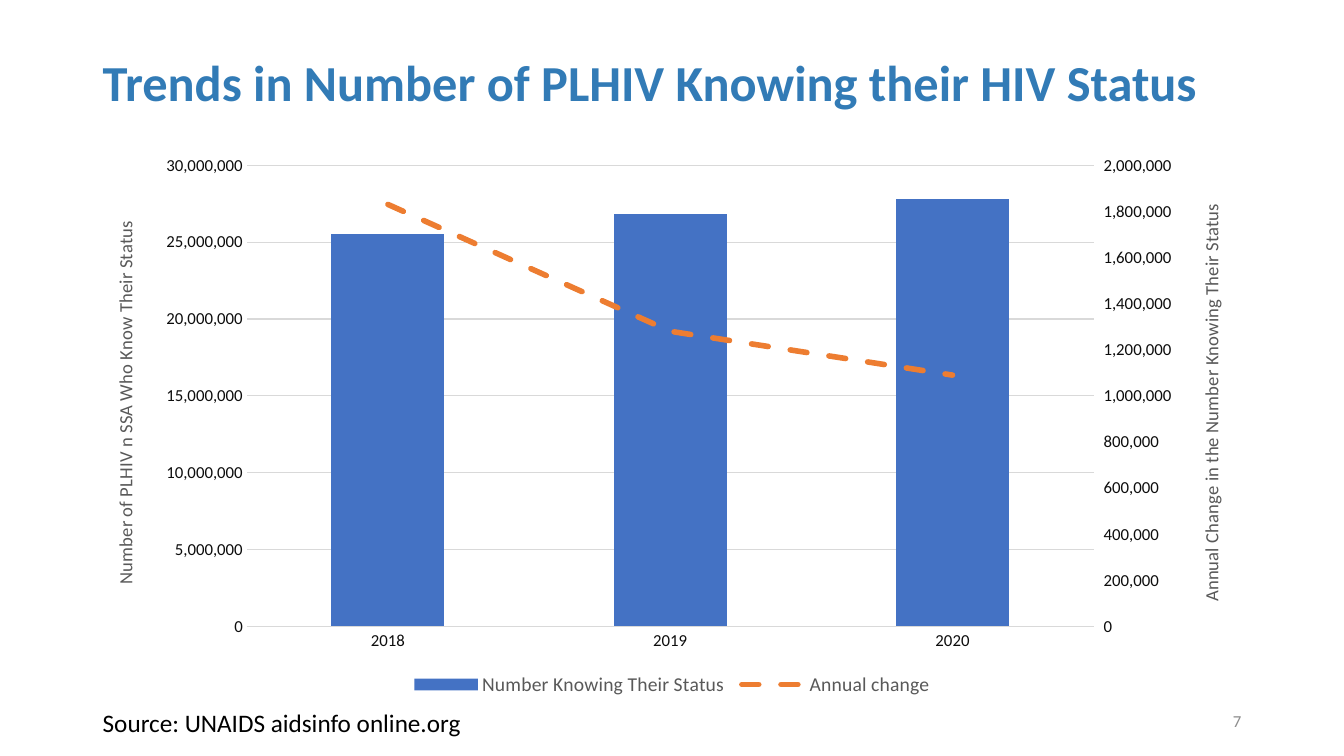
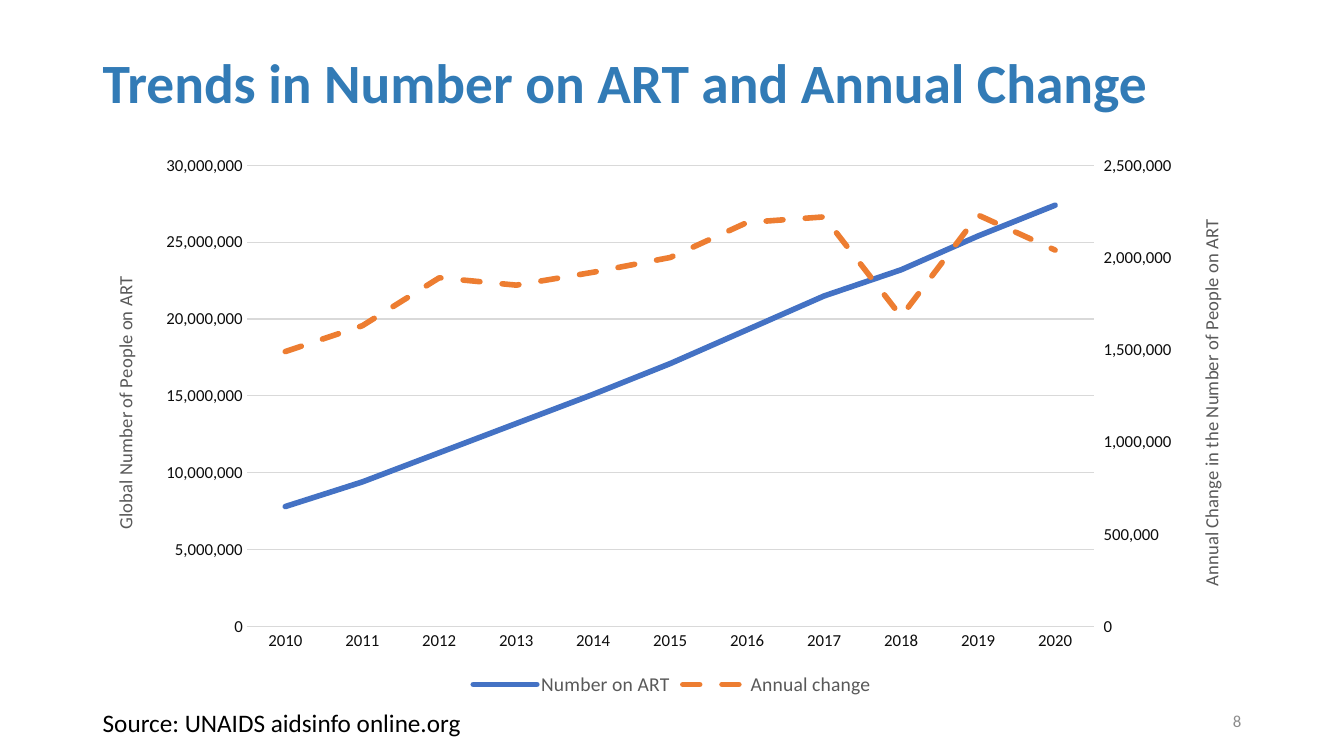
from copy import deepcopy

from pptx import Presentation
from pptx.chart.data import CategoryChartData
from pptx.dml.color import RGBColor
from pptx.enum.chart import XL_CHART_TYPE as ChartType
from pptx.enum.chart import XL_LEGEND_POSITION as LegendPosition
from pptx.enum.chart import XL_MARKER_STYLE as MarkerStyle
from pptx.enum.chart import XL_TICK_MARK as TickMark
from pptx.enum.dml import MSO_LINE as Dash
from pptx.enum.text import MSO_ANCHOR as Anchor
from pptx.enum.text import PP_ALIGN as Align
from pptx.oxml import parse_xml
from pptx.oxml.ns import nsdecls, qn
from pptx.util import Inches, Pt

COLORS = {
    "title": "327BB6",
    "black": "000000",
    "tick": "0D0D0D",
    "muted": "595959",
    "number": "8C8C8C",
    "grid": "D9D9D9",
    "total": "4472C4",
    "change": "ED7D31",
}
FONT = "Calibri"
WIDTH, HEIGHT = 13.33, 7.5
MARGIN = 0.92
CONTENT = WIDTH - 2 * MARGIN
SOURCE = "Source: UNAIDS aidsinfo online.org"
PLOT_AREA = {"x": 0.133, "y": 0.038, "w": 0.731, "h": 0.829}

SLIDES = [
    {
        "title": "Trends in Number of PLHIV Knowing their HIV Status",
        "title_size": 36,
        "number": 7,
        "kind": ChartType.COLUMN_CLUSTERED,
        "first_year": 2018,
        "series": [
            ("Number Knowing Their Status ", [25500000, 26800000, 27800000]),
            ("Annual change", [1830000, 1280000, 1090000]),
        ],
        "left": ("Number of PLHIV n SSA Who Know Their Status", 30000000, 5000000),
        "right": ("Annual Change in the Number Knowing Their Status", 2000000, 200000),
    },
    {
        "title": "Trends in Number on ART and Annual Change",
        "title_size": 39.6,
        "number": 8,
        "kind": ChartType.LINE,
        "first_year": 2010,
        "series": [
            ("Number on ART", [7800000, 9400000, 11300000, 13200000, 15100000, 17100000,
                               19300000, 21500000, 23200000, 25400000, 27400000]),
            ("Annual change", [1490000, 1630000, 1890000, 1850000, 1920000, 2000000,
                               2190000, 2220000, 1680000, 2230000, 2040000]),
        ],
        "left": ("Global Number of People on ART", 30000000, 5000000),
        "right": ("Annual Change in the Number of People on ART", 2500000, 500000),
    },
]


def color(name):
    return RGBColor.from_string(COLORS[name])


def style_font(font, size, name, bold=False):
    for key, value in {"name": FONT, "size": Pt(size), "bold": bold}.items():
        setattr(font, key, value)
    font.color.rgb = color(name)


def add_text(page, text, place, size, name, bold=False, anchor=Anchor.MIDDLE,
             align=Align.LEFT, spacing=1.0):
    box = page.shapes.add_textbox(*map(Inches, place))
    frame = box.text_frame
    frame.word_wrap = True
    frame.vertical_anchor = anchor
    para = frame.paragraphs[0]
    para.alignment, para.line_spacing = align, spacing
    span = para.add_run()
    span.text = text
    style_font(span.font, size, name, bold)


def style_value_axis(axis, title, limit, step):
    scale = {"minimum_scale": 0, "maximum_scale": limit, "major_unit": step}
    for key, value in scale.items():
        setattr(axis, key, value)
    frame = axis.axis_title.text_frame
    frame.text = title
    style_font(frame.paragraphs[0].runs[0].font, 13.3, "muted")


def style_axes(chart):
    for axis in (chart.category_axis, chart.value_axis):
        axis.major_tick_mark = axis.minor_tick_mark = TickMark.NONE
        style_font(axis.tick_labels.font, 12, "tick")
    values = chart.value_axis
    values.tick_labels.number_format = "#,##0"
    values.tick_labels.number_format_is_linked = False
    values.format.line.fill.background()
    values.has_major_gridlines = True
    for line in (chart.category_axis.format.line, values.major_gridlines.format.line):
        line.color.rgb = color("grid")
        line.width = Pt(0.75)


def style_stroke(series, name):
    line = series.format.line
    line.color.rgb = color(name)
    line.width = Pt(4)
    if name == "change":
        line.dash_style = Dash.DASH
    series.marker.style = MarkerStyle.NONE
    series.smooth = False


def rotate_titles(chart):
    for title in chart.element.iter(qn("c:title")):
        for body in title.iter(qn("a:bodyPr")):
            body.set("rot", "-5400000")
            body.set("vert", "horz")


def add_second_axis(chart, content):
    area = chart.element.find(".//" + qn("c:plotArea"))
    first_plot = next(area.iterchildren(qn("c:barChart"), qn("c:lineChart")))
    change = first_plot.findall(qn("c:ser"))[1]
    for flag in change.findall(qn("c:invertIfNegative")):
        change.remove(flag)
    plot = parse_xml(
        f'<c:lineChart {nsdecls("c")}><c:grouping val="standard"/><c:varyColors val="0"/>'
        '<c:marker val="1"/><c:axId val="5001"/><c:axId val="5002"/></c:lineChart>')
    plot.insert(2, change)
    first_plot.addnext(plot)

    left_axis = chart.value_axis
    style_value_axis(left_axis, *content["right"])
    values = area.find(qn("c:valAx"))
    categories = area.find(qn("c:catAx"))
    right, hidden = deepcopy(values), deepcopy(categories)
    right.remove(right.find(qn("c:majorGridlines")))
    settings = [
        (right, {"axId": "5002", "crossAx": "5001", "axPos": "r",
                 "crosses": "max", "majorTickMark": "out"}),
        (hidden, {"axId": "5001", "crossAx": "5002", "delete": "1"}),
    ]
    for axis, changes in settings:
        for tag, value in changes.items():
            axis.find(qn("c:" + tag)).set("val", value)
    values.addnext(right)
    right.addnext(hidden)
    style_value_axis(left_axis, *content["left"])
    rotate_titles(chart)


def place_plot(chart):
    area = chart.element.find(".//" + qn("c:plotArea"))
    for layout in area.findall(qn("c:layout")):
        area.remove(layout)
    shares = "".join(f'<c:{key} val="{value}"/>' for key, value in PLOT_AREA.items())
    area.insert(0, parse_xml(
        f'<c:layout {nsdecls("c")}><c:manualLayout><c:layoutTarget val="inner"/>'
        f'<c:xMode val="edge"/><c:yMode val="edge"/>{shares}</c:manualLayout></c:layout>'))


def add_trend_chart(page, content):
    data = CategoryChartData(number_format="#,##0")
    first = content["first_year"]
    count = len(content["series"][0][1])
    data.categories = [str(first + step) for step in range(count)]
    for name, values in content["series"]:
        data.add_series(name, values)
    place = map(Inches, (MARGIN, 1.43, CONTENT, 5.52))
    chart = page.shapes.add_chart(content["kind"], *place, data).chart
    style_font(chart.font, 10, "black")
    chart.has_title = False
    chart.has_legend = True
    chart.legend.position = LegendPosition.BOTTOM
    chart.legend.include_in_layout = False
    style_font(chart.legend.font, 14, "muted")
    style_axes(chart)
    add_second_axis(chart, content)
    place_plot(chart)

    main_plot, trend = chart.plots
    main_plot.vary_by_categories = False
    total = main_plot.series[0]
    if content["kind"] == ChartType.COLUMN_CLUSTERED:
        main_plot.gap_width = 150
        total.format.fill.solid()
        total.format.fill.fore_color.rgb = color("total")
    else:
        style_stroke(total, "total")
    style_stroke(trend.series[0], "change")
    for series in chart.element.iter(qn("c:ser")):
        for line in series.iter(qn("a:ln")):
            line.set("cap", "rnd")


def main():
    deck = Presentation()
    deck.slide_width, deck.slide_height = Inches(WIDTH), Inches(HEIGHT)
    for content in SLIDES:
        page = deck.slides.add_slide(deck.slide_layouts[6])
        add_text(page, content["title"], (MARGIN, 0.4, CONTENT, 0.9),
                 content["title_size"], "title", bold=True, spacing=0.9)
        add_trend_chart(page, content)
        add_text(page, str(content["number"]), (WIDTH - MARGIN - 3, 6.95, 3, 0.4),
                 12, "number", align=Align.RIGHT)
        add_text(page, SOURCE, (MARGIN, 6.97, 4.55, 0.4), 18, "black", anchor=Anchor.TOP)
    deck.save("out.pptx")


if __name__ == "__main__":
    main()
